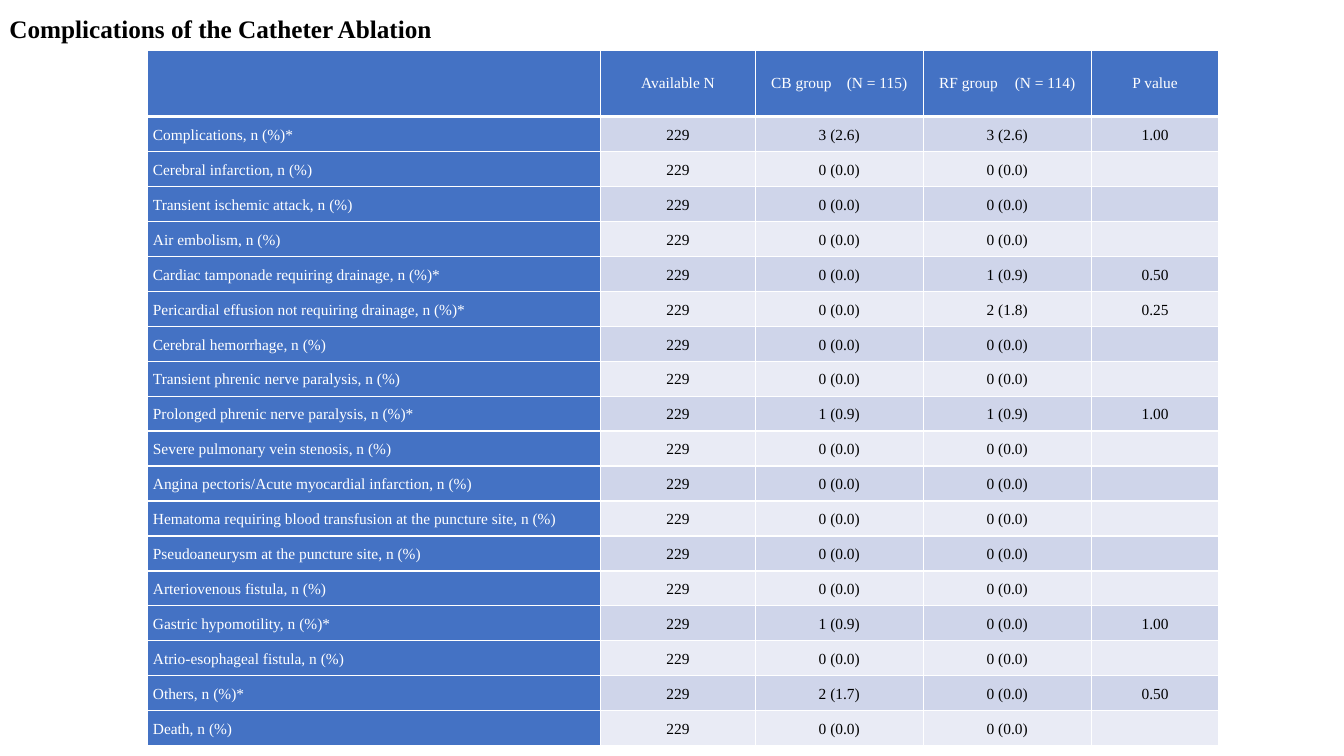
from lxml.etree import SubElement
from pptx import Presentation
from pptx.dml.color import RGBColor
from pptx.enum.text import MSO_ANCHOR, MSO_AUTO_SIZE, PP_ALIGN
from pptx.oxml.ns import qn
from pptx.util import Inches, Pt

COLORS = {"head": "4472C4", "odd": "CFD5EA", "even": "E9EBF5", "white": "FFFFFF", "black": "000000"}
FONT = "Times New Roman"
SLIDE_WIDTH, SLIDE_HEIGHT = Inches(13.33), Inches(7.5)

# Shares of the slide in percent
COLUMNS = [33.7, 11.5, 12.5, 12.5, 9.5]
TABLE_LEFT, TABLE_TOP, TABLE_HEIGHT, HEADER_HEIGHT = 11, 6.7, 92, 8.7

HEADERS = ["", "Available N", "CB group\t(N = 115)", "RF group\t(N = 114)", "P value"]
TOTAL = "229"
NONE = "0 (0.0)"
# Complication, CB group, RF group, P value
COMPLICATIONS = [
    ("Complications, n (%)*", "3 (2.6)", "3 (2.6)", "1.00"),
    ("Cerebral infarction, n (%)", NONE, NONE, ""),
    ("Transient ischemic attack, n (%)", NONE, NONE, ""),
    ("Air embolism, n (%)", NONE, NONE, ""),
    ("Cardiac tamponade requiring drainage, n (%)*", NONE, "1 (0.9)", "0.50"),
    ("Pericardial effusion not requiring drainage, n (%)*", NONE, "2 (1.8)", "0.25"),
    ("Cerebral hemorrhage, n (%)", NONE, NONE, ""),
    ("Transient phrenic nerve paralysis, n (%)", NONE, NONE, ""),
    ("Prolonged phrenic nerve paralysis, n (%)*", "1 (0.9)", "1 (0.9)", "1.00"),
    ("Severe pulmonary vein stenosis, n (%)", NONE, NONE, ""),
    ("Angina pectoris/Acute myocardial infarction, n (%)", NONE, NONE, ""),
    ("Hematoma requiring blood transfusion at the puncture site, n (%)", NONE, NONE, ""),
    ("Pseudoaneurysm at the puncture site, n (%)", NONE, NONE, ""),
    ("Arteriovenous fistula, n (%)", NONE, NONE, ""),
    ("Gastric hypomotility, n (%)*", "1 (0.9)", NONE, "1.00"),
    ("Atrio-esophageal fistula, n (%)", NONE, NONE, ""),
    ("Others, n (%)*", "2 (1.7)", NONE, "0.50"),
    ("Death, n (%)", NONE, NONE, ""),
]


def across(percent):
    return int(SLIDE_WIDTH * percent / 100)


def down(percent):
    return int(SLIDE_HEIGHT * percent / 100)


def write(para, text, size=11, color="black", bold=False, align=PP_ALIGN.CENTER):
    """Add one formatted span of text to a paragraph."""
    para.alignment = align
    span = para.add_run()
    span.text = text
    span.font.name = FONT
    span.font.size = Pt(size)
    span.font.bold = bold
    span.font.color.rgb = RGBColor.from_string(COLORS[color])


def add_tab(para, position):
    tabs = SubElement(para._p.get_or_add_pPr(), qn("a:tabLst"))
    SubElement(tabs, qn("a:tab"), pos=str(position), algn="l")


def add_borders(cell, top=1, bottom=1):
    """Draw white lines on the four sides; widths are in points."""
    properties = cell._tc.get_or_add_tcPr()
    for side, width in (("L", 1), ("R", 1), ("T", top), ("B", bottom)):
        line = SubElement(properties, qn(f"a:ln{side}"), w=str(Pt(width)))
        fill = SubElement(line, qn("a:solidFill"))
        SubElement(fill, qn("a:srgbClr"), val=COLORS["white"])


def fill_cell(cell, text, row, column):
    is_header, is_label = row == 0, column == 0
    # Lines and fill
    add_borders(cell, top=3 if row == 1 else 1, bottom=3 if is_header else 1)
    shade = "head" if is_header or is_label else ("odd" if row % 2 else "even")
    cell.fill.solid()
    cell.fill.fore_color.rgb = RGBColor.from_string(COLORS[shade])
    # Margins
    cell.margin_left = Inches(0.05 if is_label else 0)
    cell.margin_right = cell.margin_bottom = 0
    cell.margin_top = Inches(0.1 if text and not is_header else 0)
    cell.vertical_anchor = MSO_ANCHOR.MIDDLE if is_header else MSO_ANCHOR.TOP
    # Text
    if text:
        para = cell.text_frame.paragraphs[0]
        write(para, text, color="white" if shade == "head" else "black",
              align=PP_ALIGN.LEFT if is_label else PP_ALIGN.CENTER)
        if "\t" in text:
            add_tab(para, Inches(0.75))


def add_title(page, text):
    box = page.shapes.title
    box.left, box.top, box.width, box.height = across(0.7), down(1.8), across(31.7), down(4.4)
    frame = box.text_frame
    frame.margin_left = frame.margin_right = frame.margin_top = frame.margin_bottom = 0
    frame.vertical_anchor = MSO_ANCHOR.TOP
    frame.auto_size = MSO_AUTO_SIZE.NONE
    frame.word_wrap = False
    write(frame.paragraphs[0], text, size=18, bold=True, align=PP_ALIGN.LEFT)


def add_complications_table(page):
    rows = [HEADERS] + [(label, TOTAL, *values) for label, *values in COMPLICATIONS]
    table = page.shapes.add_table(len(rows), len(COLUMNS), across(TABLE_LEFT), down(TABLE_TOP),
                                  across(sum(COLUMNS)), down(TABLE_HEIGHT)).table
    table.first_row = table.horz_banding = False
    for column, share in zip(table.columns, COLUMNS):
        column.width = across(share)
    body_height = (TABLE_HEIGHT - HEADER_HEIGHT) / len(COMPLICATIONS)
    for row, texts in enumerate(rows):
        table.rows[row].height = down(body_height if row else HEADER_HEIGHT)
        for column, text in enumerate(texts):
            fill_cell(table.cell(row, column), text, row, column)


def main():
    deck = Presentation()
    deck.slide_width, deck.slide_height = SLIDE_WIDTH, SLIDE_HEIGHT
    page = deck.slides.add_slide(deck.slide_layouts[5])
    add_title(page, "Complications of the Catheter Ablation")
    add_complications_table(page)
    deck.save("out.pptx")


if __name__ == "__main__":
    main()
